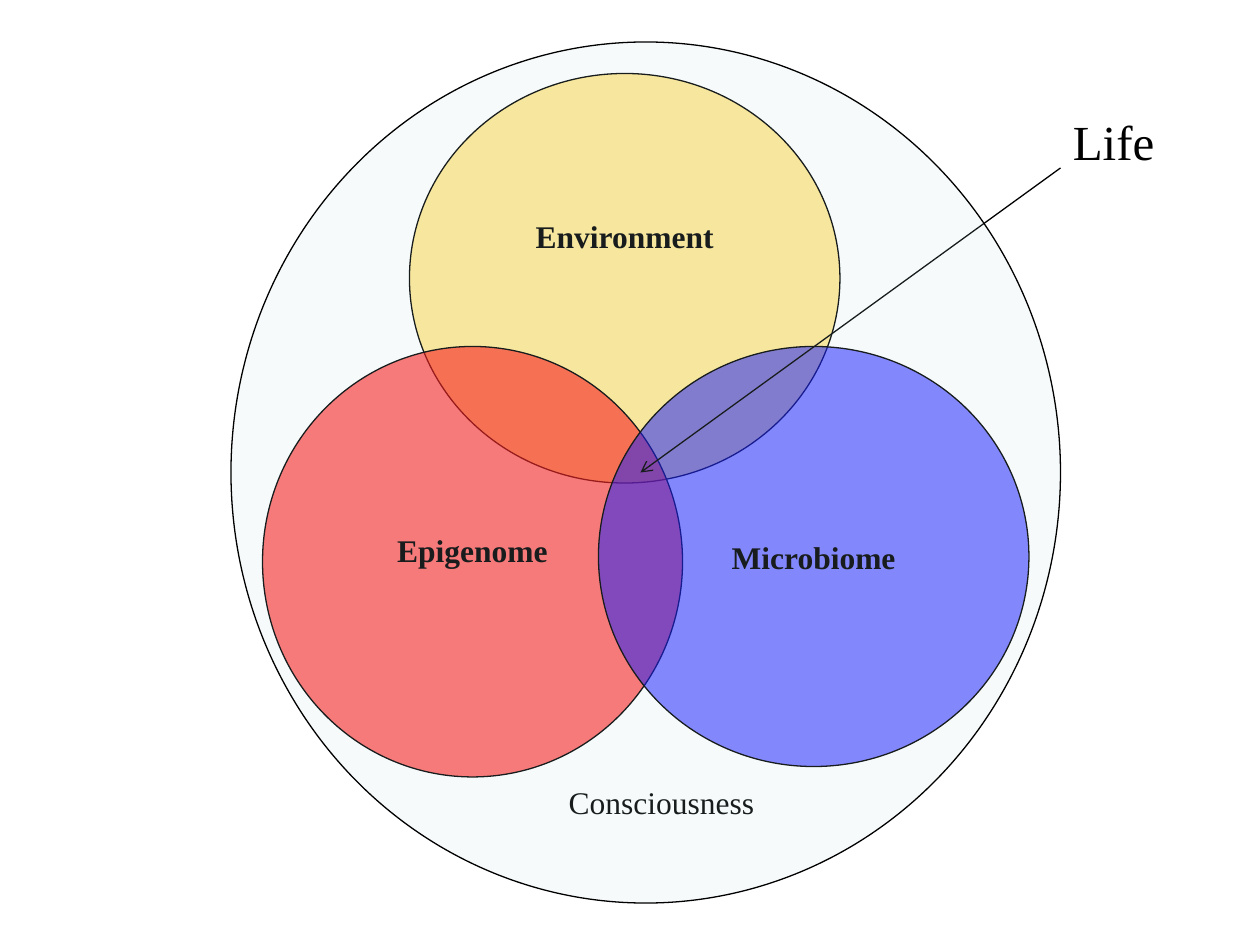
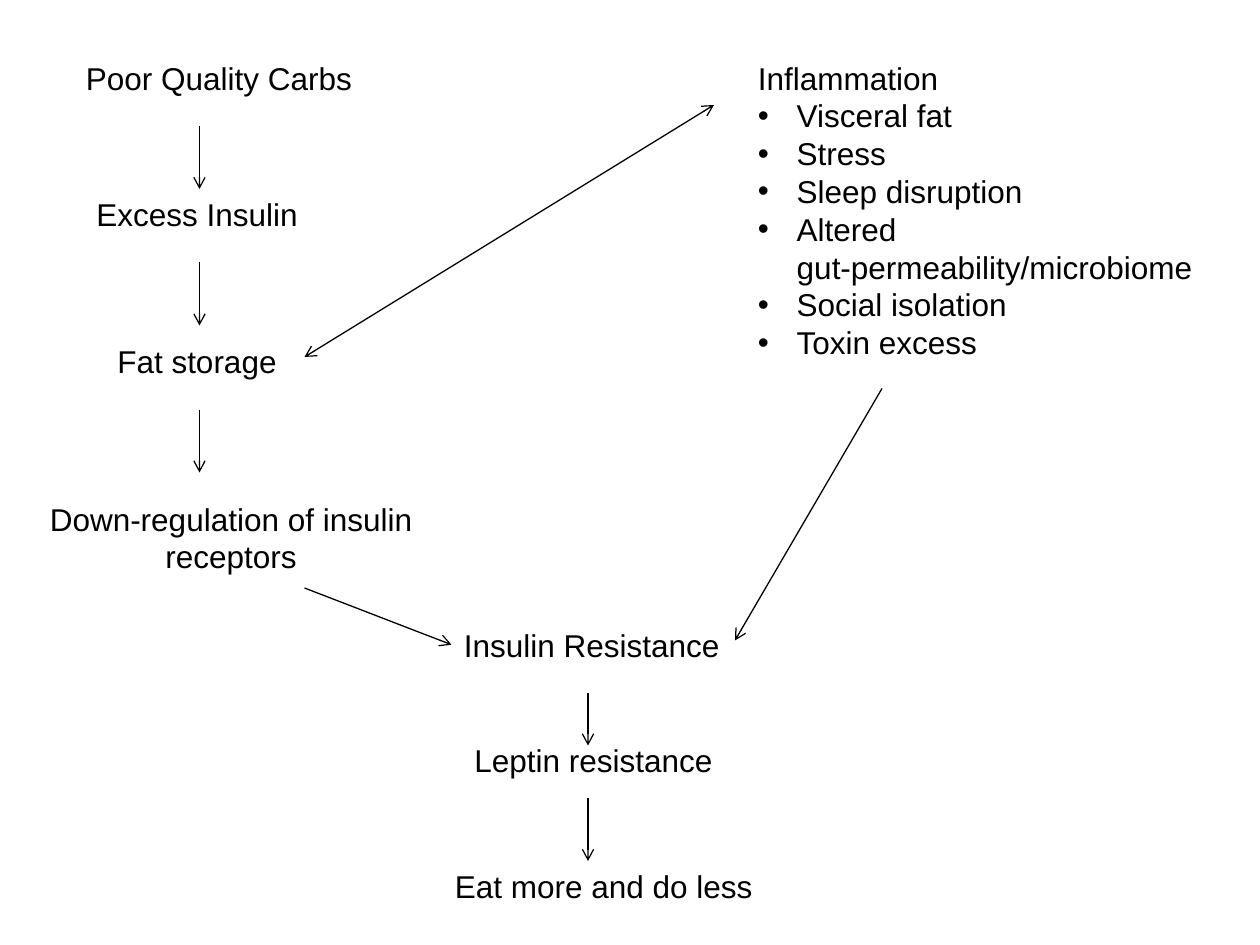
"""Build a Venn diagram of life and a flow chart of insulin resistance."""
from lxml import etree
from pptx import Presentation
from pptx import util as u
from pptx.dml.color import RGBColor
from pptx.enum import shapes, text
from pptx.oxml.ns import qn

PX = 7620
BLACK = RGBColor(0x00, 0x00, 0x00)
YELLOW = RGBColor(0xFF, 0xCE, 0x13)
RED = RGBColor(0xFF, 0x00, 0x00)
BLUE = RGBColor(0x00, 0x00, 0xFF)
PALE_TEAL = RGBColor(0xBB, 0xE0, 0xE3)
SERIF = "Times New Roman"
SANS = "Arial"
LEFT, CENTER = text.PP_ALIGN.LEFT, text.PP_ALIGN.CENTER
LINE_WIDTH = u.Pt(0.75)


def add_label(slide, box, wording, font_name, size=18, alignment=LEFT):
    label = slide.shapes.add_textbox(*[length * PX for length in box])
    frame = label.text_frame
    frame.word_wrap = True
    frame.auto_size = text.MSO_AUTO_SIZE.SHAPE_TO_FIT_TEXT
    frame.text = wording
    for paragraph in frame.paragraphs:
        paragraph.alignment = alignment
        if font_name == SANS:
            paragraph.line_spacing = u.Pt(21.6)
        for run in paragraph.runs:
            run.font.name = font_name
            run.font.size = u.Pt(size)
            run.font.color.rgb = BLACK
    return label


def add_arrow(slide, ends, tips=("tailEnd",)):
    arrow = slide.shapes.add_connector(
        shapes.MSO_CONNECTOR.STRAIGHT, *[length * PX for length in ends])
    arrow.line.color.rgb = BLACK
    arrow.line.width = LINE_WIDTH
    properties = arrow.element.spPr
    line = properties.find(qn("a:ln"))
    for tip in tips:
        etree.SubElement(line, qn(f"a:{tip}"), type="arrow")
    etree.SubElement(properties, qn("a:effectLst"))


presentation = Presentation()
presentation.slide_width = 1200 * PX
presentation.slide_height = 900 * PX
blank = presentation.slide_layouts[6]

venn = presentation.slides.add_slide(blank)
circles = [
    ("Environment", (390, 70, 410, 390), YELLOW, 45, 80),
    ("Epigenome", (250, 330, 400, 410), RED, 58, 23),
    ("Microbiome", (570, 330, 410, 400), BLUE, 52, 0),
    ("", (220, 40, 790, 820), PALE_TEAL, 13, 0),
]
for name, box, color, opacity, lift in circles:
    ellipse = venn.shapes.add_shape(
        shapes.MSO_SHAPE.OVAL, *[length * PX for length in box])
    ellipse.shadow.inherit = False
    ellipse.fill.solid()
    ellipse.fill.fore_color.rgb = color
    fill_color = ellipse.element.spPr.find(qn("a:solidFill"))[0]
    etree.SubElement(fill_color, qn("a:alpha"), val=str(opacity * 1000))
    ellipse.line.color.rgb = BLACK
    ellipse.line.width = LINE_WIDTH
    if name:
        frame = ellipse.text_frame
        frame.text = name
        frame.vertical_anchor = text.MSO_ANCHOR.MIDDLE
        frame.margin_top = 0
        frame.margin_bottom = lift * PX
        paragraph = frame.paragraphs[0]
        paragraph.alignment = CENTER
        font = paragraph.runs[0].font
        font.name, font.size, font.bold = SERIF, u.Pt(18), True
        font.color.rgb = BLACK

add_arrow(venn, (1010, 160, 610, 450))
add_label(venn, (1010, 100, 120, 68), "Life", SERIF, 28)
add_label(venn, (470, 740, 320, 60), "Consciousness", SERIF, alignment=CENTER)
venn.shapes.element.append(ellipse.element)

flow = presentation.slides.add_slide(blank)
steps = [
    ("Poor Quality Carbs", (70, 50, 320, 48), LEFT),
    ("Excess Insulin", (80, 180, 270, 48), LEFT),
    ("Fat storage", (100, 320, 230, 48), LEFT),
    ("Down-regulation of insulin receptors", (30, 470, 380, 85), CENTER),
    ("Insulin Resistance", (430, 590, 300, 48), LEFT),
    ("Leptin resistance", (440, 700, 320, 48), LEFT),
    ("Eat more and do less", (320, 820, 510, 48), CENTER),
]
for wording, box, alignment in steps:
    add_label(flow, box, wording, SANS, alignment=alignment)

causes = [
    "Inflammation",
    "Visceral fat",
    "Stress",
    "Sleep disruption",
    "Altered gut-permeability/microbiome",
    "Social isolation",
    "Toxin excess",
]
inflammation = add_label(flow, (710, 50, 440, 302), "\n".join(causes), SANS)
for paragraph in inflammation.text_frame.paragraphs[1:]:
    properties = paragraph._p.get_or_add_pPr()
    properties.set("marL", str(37 * PX))
    properties.set("indent", str(-37 * PX))
    etree.SubElement(properties, qn("a:buFont"), typeface=SANS)
    etree.SubElement(properties, qn("a:buChar"), char="•")

for x, top, bottom in [(190, 120, 180), (190, 250, 310), (190, 390, 450),
                       (560, 660, 710), (560, 760, 820)]:
    add_arrow(flow, (x, top, x, bottom))
add_arrow(flow, (290, 560, 430, 614))
add_arrow(flow, (840, 370, 700, 610))
add_arrow(flow, (290, 340, 680, 100), ("headEnd", "tailEnd"))

presentation.save("out.pptx")
